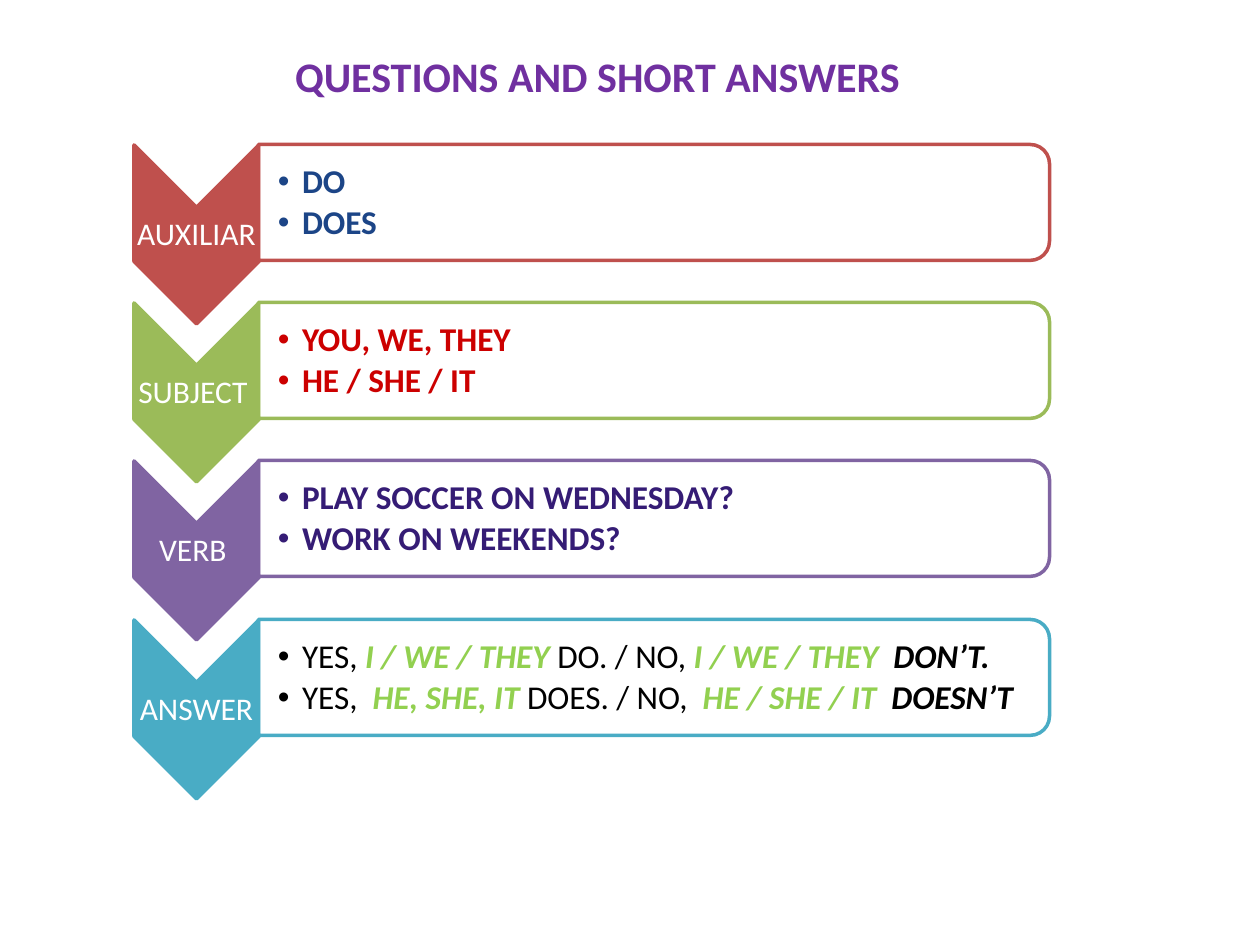
"""Build a slide on the word order of questions and short answers."""
from lxml import etree
from pptx import Presentation
from pptx import util as u
from pptx.dml.color import RGBColor
from pptx.enum import shapes, text
from pptx.oxml.ns import qn

PX = 914400 / 126
COLORS = {
    "title": "7030A0", "white": "FFFFFF", "black": "000000", "pronoun": "92D050",
    "auxiliar": "BF504D", "subject": "9BBB59", "verb": "8064A2", "answer": "49ACC5",
    "blue": "1C4587", "red": "CC0000", "indigo": "351C75",
}


def emu(*lengths):
    return [u.Emu(round(length * PX)) for length in lengths]


def write(paragraphs, box, size, insets=(1, 1, 1, 1), align=text.PP_ALIGN.LEFT,
          anchor=text.MSO_ANCHOR.MIDDLE, spacing=0.9, bullet=None):
    frame = slide.shapes.add_textbox(*emu(*box)).text_frame
    frame.word_wrap = True
    frame.vertical_anchor = anchor
    (frame.margin_left, frame.margin_top,
     frame.margin_right, frame.margin_bottom) = emu(*insets)
    for index, runs in enumerate(paragraphs):
        line = frame.add_paragraph() if index else frame.paragraphs[0]
        line.alignment, line.line_spacing = align, spacing
        line.space_before = u.Pt(2.9 if index else 0)
        if bullet:
            properties = line._p.get_or_add_pPr()
            indent = emu(24)[0]
            properties.set("marL", str(indent))
            properties.set("indent", str(-indent))
            tint = etree.SubElement(properties, qn("a:buClr"))
            etree.SubElement(tint, qn("a:srgbClr"), val=COLORS[bullet])
            etree.SubElement(properties, qn("a:buFont"), typeface="Arial")
            etree.SubElement(properties, qn("a:buChar"), char="•")
        for words, color, style in runs:
            run = line.add_run()
            run.text = words
            run.font.name, run.font.size = "Calibri", u.Pt(size)
            run.font.bold, run.font.italic = "b" in style, "i" in style
            run.font.color.rgb = RGBColor.from_string(COLORS[color])


deck = Presentation()
deck.slide_width, deck.slide_height = emu(1260, 945)
slide = deck.slides.add_slide(deck.slide_layouts[6])

write([[("QUESTIONS AND SHORT ANSWERS", "title", "b")]], (282, 45, 735, 63), 24,
      insets=(13, 6, 13, 6), anchor=text.MSO_ANCHOR.TOP, spacing=1)

steps = [
    ("AUXILIAR", "auxiliar", "blue",
     [[("DO", "blue", "b")], [("DOES", "blue", "b")]]),
    ("SUBJECT ", "subject", "red",
     [[("YOU, WE, THEY", "red", "b")], [("HE / SHE / IT", "red", "b")]]),
    ("VERB ", "verb", "indigo",
     [[("PLAY SOCCER ON WEDNESDAY?", "indigo", "b")],
      [("WORK ON WEEKENDS?", "indigo", "b")]]),
    ("ANSWER", "answer", "black",
     [[("YES, ", "black", ""), ("I / WE / THEY ", "pronoun", "bi"),
       ("DO. / NO, ", "black", ""), ("I / WE / THEY  ", "pronoun", "bi"),
       ("DON’T.", "black", "bi")],
      [("YES, ", "black", ""), (" HE, SHE, IT ", "pronoun", "bi"),
       ("DOES. / NO, ", "black", ""), (" HE / SHE / IT  ", "pronoun", "bi"),
       ("DOESN’T", "black", "bi")]]),
]

for row, (label, accent, bullet, examples) in enumerate(steps):
    drop = 475 * row // 3
    outlines = [
        (shapes.MSO_SHAPE.CHEVRON, (107, 172, 179, 125), (0.5,), accent),
        (shapes.MSO_SHAPE.ROUND_2_SAME_RECTANGLE, (596, -193, 116, 791), (0.167, 0), "white"),
    ]
    for preset, (left, top, width, height), adjustments, fill in outlines:
        outline = slide.shapes.add_shape(preset, *emu(left, top + drop, width, height))
        outline.rotation = 90
        outline.shadow.inherit = False
        for index, value in enumerate(adjustments):
            outline.adjustments[index] = value
        outline.fill.solid()
        outline.fill.fore_color.rgb = RGBColor.from_string(COLORS[fill])
        outline.line.color.rgb = RGBColor.from_string(COLORS[accent])
        outline.line.width = u.Pt(2)
    paint = outline._element.spPr.find(qn("a:solidFill")).find(qn("a:srgbClr"))
    etree.SubElement(paint, qn("a:alpha"), val="90000")
    write([[(label, "white", "")]], (134, 208 + drop, 125, 54), 18,
          align=text.PP_ALIGN.CENTER)
    write(examples, (260, 151 + drop, 785, 105), 19, insets=(18, 1, 1, 1), bullet=bullet)

deck.save("out.pptx")
